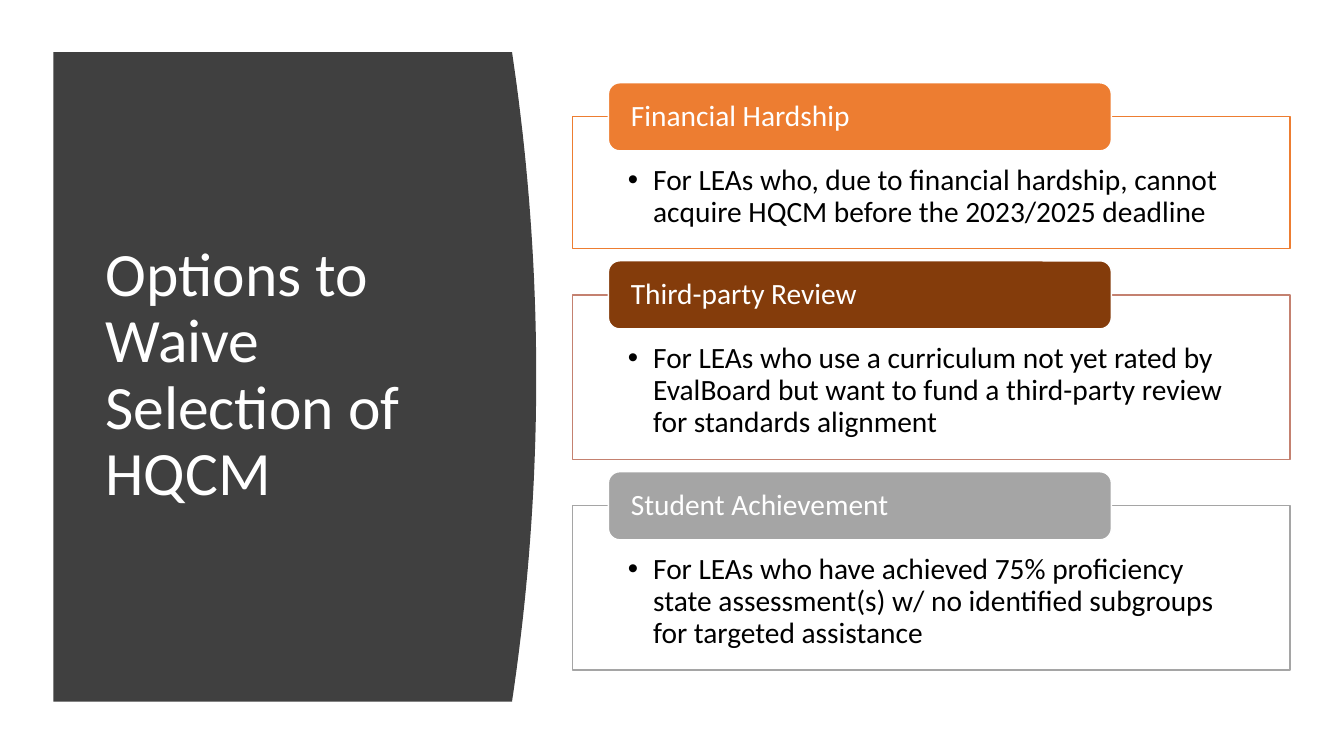
import pptx
import pptx.dml.color
import pptx.enum.shapes
import pptx.enum.text
import pptx.oxml
import pptx.oxml.ns
import pptx.util

THEME = {
    "font": "Calibri",
    "bullet_font": "Arial",
    "title_size": 44,
    "body_size": 21,
    "panel": "404040",
    "light": "FFFFFF",
    "dark": "000000",
}
OPTIONS = [  # heading, detail, header colour, border colour, box height
    ("Financial Hardship",
     "For LEAs who, due to financial hardship, cannot acquire HQCM before the 2023/2025 deadline",
     "ED7D31", "ED7D31", 17.4),
    ("Third-party Review",
     "For LEAs who use a curriculum not yet rated by EvalBoard but want to fund a third-party review "
     "for standards alignment",
     "843C0B", "C48170", 21.75),
    ("Student Achievement",
     "For LEAs who have achieved 75% proficiency state assessment(s) w/ no identified subgroups "
     "for targeted assistance",
     "A5A5A5", "A5A5A5", 21.75),
]
RGB = pptx.dml.color.RGBColor.from_string
SHAPE = pptx.enum.shapes.MSO_SHAPE
ANCHOR = pptx.enum.text.MSO_ANCHOR

presentation = pptx.Presentation()
presentation.slide_width = pptx.util.Inches(13.33)
presentation.slide_height = pptx.util.Inches(7.5)
slide = presentation.slides.add_slide(presentation.slide_layouts[6])
column = presentation.slide_width / 100
row = presentation.slide_height / 100


def paint(shape, fill, line=None):
    shape.shadow.inherit = False
    shape.fill.solid()
    shape.fill.fore_color.rgb = RGB(fill)
    if line:
        shape.line.color.rgb = RGB(line)
        shape.line.width = pptx.util.Pt(1)
    else:
        shape.line.fill.background()


def write(shape, text, size, color, anchor, insets, bullet=False):
    """Fill a shape with one left-aligned paragraph; insets are in inches."""
    frame = shape.text_frame
    sides = ("margin_left", "margin_top", "margin_right", "margin_bottom")
    frame_format = {"word_wrap": True, "vertical_anchor": anchor}
    frame_format.update(zip(sides, map(pptx.util.Inches, insets)))
    for name, value in frame_format.items():
        setattr(frame, name, value)
    paragraph = frame.paragraphs[0]
    paragraph.alignment = pptx.enum.text.PP_ALIGN.LEFT
    paragraph.line_spacing = 0.9
    if bullet:
        properties = paragraph._p.get_or_add_pPr()
        indent = pptx.util.Inches(0.25)
        properties.set("marL", str(indent))
        properties.set("indent", str(-indent))
        namespace = pptx.oxml.ns.nsdecls("a")
        for element in (f'buFont {namespace} typeface="{THEME["bullet_font"]}"',
                        f'buChar {namespace} char="•"'):
            properties.append(pptx.oxml.parse_xml(f"<a:{element}/>"))
    run = paragraph.add_run()
    run.text = text
    for font in (paragraph.font, run.font):
        for name, value in {"name": THEME["font"], "size": pptx.util.Pt(size)}.items():
            setattr(font, name, value)
        font.color.rgb = RGB(color)


# Title panel: its right side bulges as a parabola
panel_left, panel_right, panel_top, panel_bottom = 3.98, 38.1, 6.9, 92.8
bulge, steps = 1.8, 40
curve = []
for step in range(steps + 1):
    share = step / steps
    curve.append(((panel_right + bulge * 4 * share * (1 - share)) * column,
                  (panel_top + (panel_bottom - panel_top) * share) * row))
builder = slide.shapes.build_freeform(panel_left * column, panel_top * row)
builder.add_line_segments(curve + [(panel_left * column, panel_bottom * row)])
paint(builder.convert_to_shape(), THEME["panel"])

title = slide.shapes.add_textbox(
    *map(round, (7.1 * column, 14.8 * row, 28.05 * column, 69.87 * row)))
write(title, "Options to Waive Selection of HQCM", THEME["title_size"],
      THEME["light"], ANCHOR.MIDDLE, (0.1, 0.05, 0.1, 0.05))

# Each header straddles the top edge of its box
header_top, header_height, gap = 10.95, 9, 1.65
for heading, detail, header_color, border_color, box_height in OPTIONS:
    box_top = header_top + header_height / 2
    box = slide.shapes.add_shape(
        SHAPE.RECTANGLE,
        *map(round, (42.6 * column, box_top * row, 53.4 * column, box_height * row)))
    paint(box, THEME["light"], border_color)
    write(box, detail, THEME["body_size"], THEME["dark"], ANCHOR.TOP,
          (0.55, 0.48, 0.55, 0.16), bullet=True)

    header = slide.shapes.add_shape(
        SHAPE.ROUNDED_RECTANGLE,
        *map(round, (45.27 * column, header_top * row, 37.42 * column, header_height * row)))
    paint(header, header_color, THEME["light"])
    write(header, heading, THEME["body_size"], THEME["light"], ANCHOR.MIDDLE,
          (0.19, 0, 0.19, 0))
    header_top = box_top + box_height + gap

presentation.save("out.pptx")
